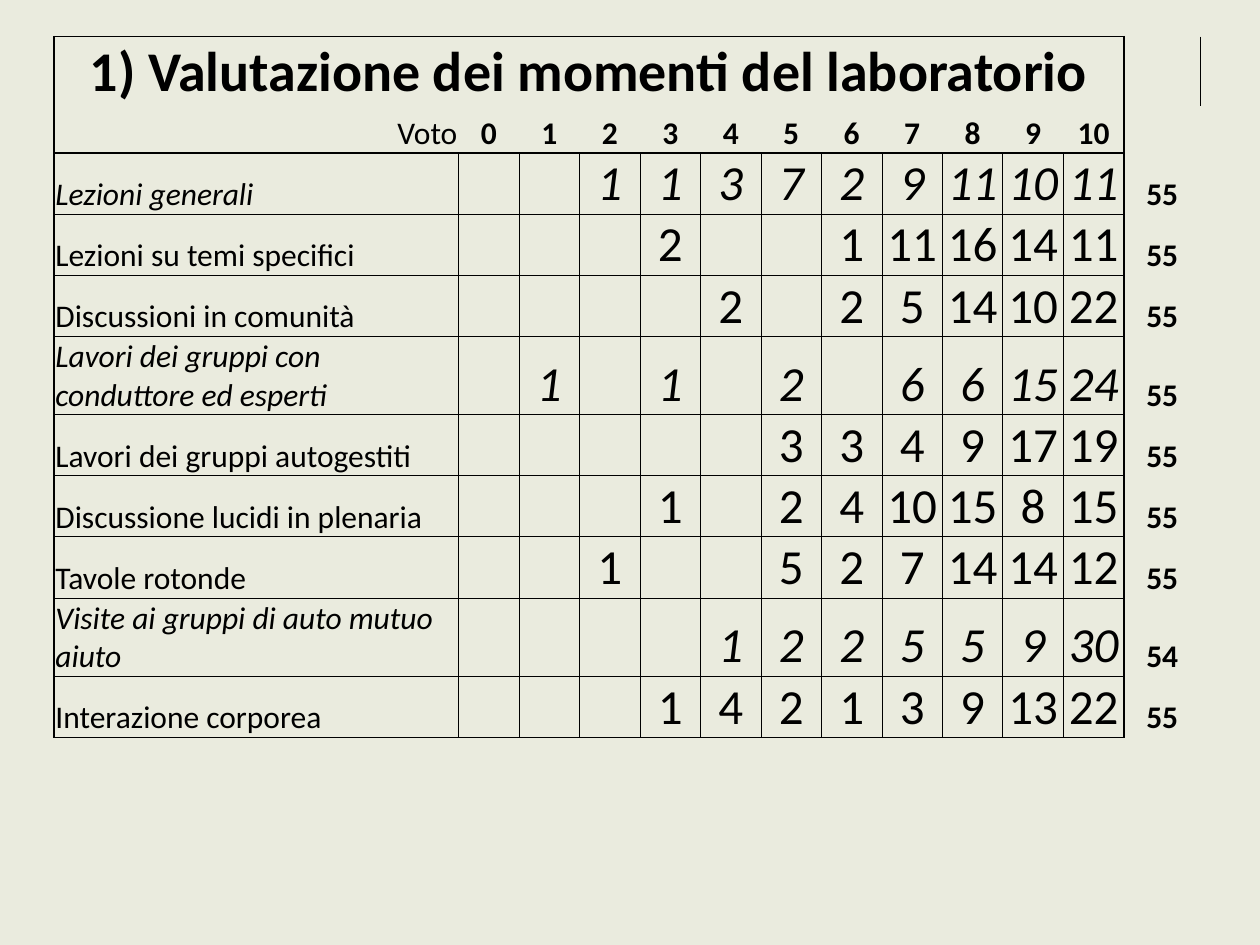
from lxml.etree import SubElement
from pptx import Presentation
from pptx.dml.color import RGBColor
from pptx.enum.text import MSO_ANCHOR, PP_ALIGN
from pptx.oxml.ns import qn
from pptx.util import Inches, Pt

COLORS = {"background": "EAEBDE", "ink": "000000"}
FONT = "Calibri"
NO_STYLE = "{2D5ABB26-0587-4C30-8999-92F81FD0307C}"

# Grid: one label column, eleven marks, one total outside the frame
COLUMN_WIDTHS = [3.21] + [0.48] * 11 + [0.61]
ROW_HEIGHTS = [0.29, 0.37] + [0.36] * 8 + [0.37]
LAST_MARK, TOTAL = 11, 12
FRAME, INNER = 1, 0.5

TITLE = "1) Valutazione dei momenti del laboratorio"
# Label, italic, votes for the marks 0 to 10 (0 leaves the cell empty), total
RATINGS = [
    ("Lezioni generali", True, [0, 0, 1, 1, 3, 7, 2, 9, 11, 10, 11], 55),
    ("Lezioni su temi specifici", False, [0, 0, 0, 2, 0, 0, 1, 11, 16, 14, 11], 55),
    ("Discussioni in comunità", False, [0, 0, 0, 0, 2, 0, 2, 5, 14, 10, 22], 55),
    ("Lavori dei gruppi con conduttore ed esperti", True,
     [0, 1, 0, 1, 0, 2, 0, 6, 6, 15, 24], 55),
    ("Lavori dei gruppi autogestiti", False, [0, 0, 0, 0, 0, 3, 3, 4, 9, 17, 19], 55),
    ("Discussione lucidi in plenaria", False, [0, 0, 0, 1, 0, 2, 4, 10, 15, 8, 15], 55),
    ("Tavole rotonde", False, [0, 0, 1, 0, 0, 5, 2, 7, 14, 14, 12], 55),
    ("Visite ai gruppi di auto mutuo aiuto", True,
     [0, 0, 0, 0, 1, 2, 2, 5, 5, 9, 30], 54),
    ("Interazione corporea", False, [0, 0, 0, 1, 4, 2, 1, 3, 9, 13, 22], 55),
]


def write(cell, text, size=18, bold=False, italic=False, align=PP_ALIGN.CENTER):
    paragraph = cell.text_frame.paragraphs[0]
    paragraph.alignment = align
    run = paragraph.add_run()
    run.text = str(text)
    font = run.font
    font.name, font.size, font.bold, font.italic = FONT, Pt(size), bold, italic
    font.color.rgb = RGBColor.from_string(COLORS["ink"])


def border_widths(row, column):
    """Widths in points by side: a heavier frame, and thin lines below the header."""
    if column == TOTAL:
        return {"L": FRAME}
    header, last_row = row < 2, len(ROW_HEIGHTS) - 1
    inner = None if header else INNER
    right_edge = column == LAST_MARK or row == 0
    return {
        "L": FRAME if column == 0 else inner,
        "R": FRAME if right_edge else inner,
        "T": FRAME if row in (0, 2) else inner,
        "B": FRAME if row in (1, last_row) else inner,
    }


def set_borders(cell, widths):
    properties = cell._tc.get_or_add_tcPr()
    for side, width in widths.items():
        if width is None:
            continue
        line = SubElement(properties, qn(f"a:ln{side}"), w=str(Pt(width)))
        fill = SubElement(line, qn("a:solidFill"))
        SubElement(fill, qn("a:srgbClr"), val=COLORS["ink"])


def add_grid(slide):
    frame = slide.shapes.add_table(
        len(ROW_HEIGHTS), len(COLUMN_WIDTHS), Inches(0.43), Inches(0.29),
        Inches(sum(COLUMN_WIDTHS)), Inches(sum(ROW_HEIGHTS)))
    table = frame.table
    table.first_row = table.horz_banding = False
    table._tbl.tblPr.find(qn("a:tableStyleId")).text = NO_STYLE
    for column, width in zip(table.columns, COLUMN_WIDTHS):
        column.width = Inches(width)
    for row, height in zip(table.rows, ROW_HEIGHTS):
        row.height = Inches(height)

    for row in range(len(ROW_HEIGHTS)):
        for column in range(len(COLUMN_WIDTHS)):
            cell = table.cell(row, column)
            cell.margin_left = cell.margin_right = cell.margin_top = Inches(0.01)
            cell.margin_bottom = 0
            cell.vertical_anchor = MSO_ANCHOR.BOTTOM
            if row > 0 or column in (0, TOTAL):
                set_borders(cell, border_widths(row, column))
            cell.fill.background()
    table.cell(0, 0).merge(table.cell(0, LAST_MARK))
    return table


def fill_header(table):
    write(table.cell(0, 0), TITLE, size=32, bold=True)
    write(table.cell(1, 0), "Voto", align=PP_ALIGN.RIGHT)
    for mark in range(11):
        write(table.cell(1, mark + 1), mark, bold=True)


def fill_ratings(table):
    for row, (label, italic, votes, total) in enumerate(RATINGS, start=2):
        write(table.cell(row, 0), label, italic=italic, align=PP_ALIGN.LEFT)
        for column, count in enumerate(votes, start=1):
            if count:
                write(table.cell(row, column), count, size=28, italic=italic)
        write(table.cell(row, TOTAL), total, bold=True)


def main():
    presentation = Presentation()
    presentation.slide_width, presentation.slide_height = Inches(10), Inches(7.5)
    slide = presentation.slides.add_slide(presentation.slide_layouts[6])
    background = slide.background.fill
    background.solid()
    background.fore_color.rgb = RGBColor.from_string(COLORS["background"])

    table = add_grid(slide)
    fill_header(table)
    fill_ratings(table)
    presentation.save("out.pptx")


if __name__ == "__main__":
    main()
